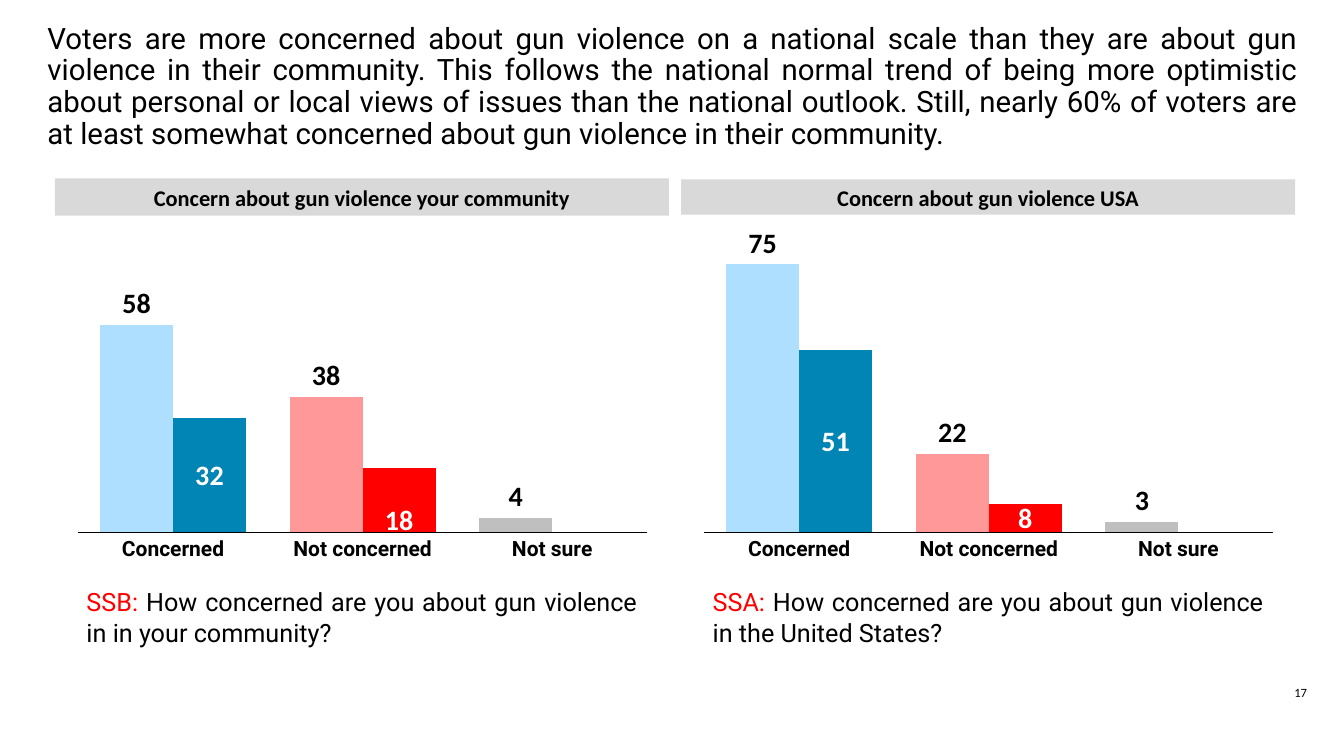
from copy import deepcopy

from lxml import etree
from pptx import Presentation
from pptx.chart.data import CategoryChartData
from pptx.dml.color import RGBColor
from pptx.enum import chart as ch, shapes, text
from pptx.util import Inches, Pt

TITLE = ("Voters are more concerned about gun violence on a national scale than they are about "
         "gun violence in their community. This follows the national normal trend of being more "
         "optimistic about personal or local views of issues than the national outlook. Still, "
         "nearly 60% of voters are at least somewhat concerned about gun violence in their community.")
PAGE = "17"
CATEGORIES = ["Concerned", "Not concerned", "Not sure"]
PANELS = [
    dict(centre=3.59, header="Concern about gun violence your community", band=(1.77, 0.37),
         total=(58, 38, 4), strong=(32, 18, None), label_drop=0.05, code="SSB: ",
         question="How concerned are you about gun violence in in your community?"),
    dict(centre=9.8, header="Concern about gun violence USA", band=(1.78, 0.35),
         total=(75, 22, 3), strong=(51, 8, None), label_drop=0, code="SSA: ",
         question="How concerned are you about gun violence in the United States?"),
]
COLORS = dict(black="000000", white="FFFFFF", red="FF0000", band="D9D9D9", light_blue="AFDFFF",
              light_red="FF9999", grey="BFBFBF", blue="0085B4")
TOTAL_FILLS = ("light_blue", "light_red", "grey")
STRONG_FILLS = ("blue", "red")
HEADER_W, CHART_W = 6.09, 5.66
CHART_TOP, CHART_H = 2.14, 3.91
QUESTION_TOP, QUESTION_H = 5.77, 0.71
PLOT = dict(layoutTarget="inner", xMode="edge", yMode="edge", x=0.003, y=0.033, w=0.997, h=0.771)
C = "{http://schemas.openxmlformats.org/drawingml/2006/chart}"
JUSTIFY, CENTER = text.PP_ALIGN.JUSTIFY, text.PP_ALIGN.CENTER


def rgb(name):
    return RGBColor.from_string(COLORS[name])


def style(font, size, name="Calibri", color="black", bold=False):
    font.size, font.name, font.bold = Pt(size), name, bold
    font.color.rgb = rgb(color)


def box(centre, top, width, height):
    return [Inches(v) for v in (centre - width / 2, top, width, height)]


def set_layout(parent, index, values):
    """Give a chart part a manual layout, in shares of the chart."""
    for old in parent.findall(C + "layout"):
        parent.remove(old)
    layout = etree.Element(C + "layout")
    manual = etree.SubElement(layout, C + "manualLayout")
    for tag, value in values.items():
        etree.SubElement(manual, C + tag).set("val", str(value))
    parent.insert(index, layout)


def split_to_second_axis(area):
    """Move the second series to a bar group on hidden axes of its own."""
    bars = area.find(C + "barChart")
    second = deepcopy(bars)
    bars.remove(bars.findall(C + "ser")[1])
    second.remove(second.find(C + "ser"))
    bars.addnext(second)
    cat, val = deepcopy(area.find(C + "catAx")), deepcopy(area.find(C + "valAx"))
    area.find(C + "valAx").addnext(val)
    val.addnext(cat)
    for ref, new_id in zip(second.findall(C + "axId"), ("5001", "5002")):
        ref.set("val", new_id)
    for axis, own, other in ((cat, "5001", "5002"), (val, "5002", "5001")):
        axis.find(C + "axId").set("val", own)
        axis.find(C + "crossAx").set("val", other)
        axis.find(C + "delete").set("val", "1")
    val.find(C + "axPos").set("val", "r")
    val.find(C + "crosses").set("val", "max")
    scaling = val.find(C + "scaling")
    scaling.remove(scaling.find(C + "min"))
    scaling.find(C + "max").set("val", "50")


def add_header(s, panel):
    sp = s.shapes.add_shape(shapes.MSO_SHAPE.RECTANGLE,
                            *box(panel["centre"], panel["band"][0], HEADER_W, panel["band"][1]))
    sp.shadow.inherit = False
    sp.fill.solid()
    sp.fill.fore_color.rgb = rgb("band")
    sp.line.fill.background()
    tf = sp.text_frame
    tf.text, tf.vertical_anchor = panel["header"], text.MSO_ANCHOR.MIDDLE
    p = tf.paragraphs[0]
    p.alignment = CENTER
    style(p.runs[0].font, 16, bold=True)


def add_bars(s, panel):
    data = CategoryChartData()
    data.categories = CATEGORIES
    data.add_series("Series 1", panel["total"])
    data.add_series("Series 2", panel["strong"])
    chart = s.shapes.add_chart(ch.XL_CHART_TYPE.COLUMN_CLUSTERED,
                               *box(panel["centre"], CHART_TOP, CHART_W, CHART_H), data).chart
    chart.has_legend = chart.has_title = False
    style(chart.font, 15)
    values, cats = chart.value_axis, chart.category_axis
    values.minimum_scale, values.maximum_scale = 0, 85
    values.has_major_gridlines = values.visible = False
    cats.major_tick_mark = ch.XL_TICK_MARK.NONE
    cats.format.line.color.rgb = rgb("black")
    cats.format.line.width = Pt(0.25)
    style(cats.tick_labels.font, 15, "Roboto", bold=True)
    plot = chart.plots[0]
    plot.gap_width, plot.overlap, plot.vary_by_categories = 60, 0, False
    area = chart._chartSpace.chart.plotArea
    set_layout(area, 0, PLOT)
    split_to_second_axis(area)

    pos = ch.XL_LABEL_POSITION
    looks = ((TOTAL_FILLS, "black", pos.OUTSIDE_END), (STRONG_FILLS, "white", pos.CENTER))
    for plot, (fills, label_color, position) in zip(chart.plots, looks):
        series = plot.series[0]
        series.invert_if_negative = False
        series.format.fill.solid()
        series.format.fill.fore_color.rgb = rgb(fills[0])
        for i, name in enumerate(fills):
            fill = series.points[i].format.fill
            fill.solid()
            fill.fore_color.rgb = rgb(name)
        labels = series.data_labels
        labels.show_value, labels.position = True, position
        style(labels.font, 20, color=label_color, bold=True)
    if panel["label_drop"]:
        low = series.points[1].data_label
        style(low.font, 20, color="white", bold=True)
        low.position = pos.CENTER
        set_layout(labels._element.find(C + "dLbl"), 1, dict(x=0, y=panel["label_drop"]))


def add_question(s, panel):
    tf = s.shapes.add_textbox(*box(panel["centre"], QUESTION_TOP, CHART_W, QUESTION_H)).text_frame
    tf.word_wrap = True
    p = tf.paragraphs[0]
    p.alignment = JUSTIFY
    for words, color in ((panel["code"], "red"), (panel["question"], "black")):
        r = p.add_run()
        r.text = words
        style(r.font, 18, "Roboto", color)


def main():
    prs = Presentation()
    prs.slide_width, prs.slide_height = Inches(13.33), Inches(7.5)
    s = prs.slides.add_slide(prs.slide_layouts.get_by_name("Title Only"))

    title = s.shapes.title
    title.left, title.top, title.width, title.height = box(6.67, 0.14, 12.6, 1.45)
    tf = title.text_frame
    tf.text, tf.word_wrap = TITLE, True
    tf.auto_size, tf.vertical_anchor = text.MSO_AUTO_SIZE.NONE, text.MSO_ANCHOR.MIDDLE
    p = tf.paragraphs[0]
    p.alignment, p.line_spacing = JUSTIFY, 0.9
    style(p.runs[0].font, 21, "Roboto")

    for panel in PANELS:
        add_bars(s, panel)
        add_header(s, panel)
        add_question(s, panel)

    tf = s.shapes.add_textbox(*box(12.9, 6.75, 0.75, 0.33)).text_frame
    tf.text, tf.word_wrap = PAGE, True
    p = tf.paragraphs[0]
    p.alignment = CENTER
    style(p.runs[0].font, 9)

    prs.save("out.pptx")


if __name__ == "__main__":
    main()
